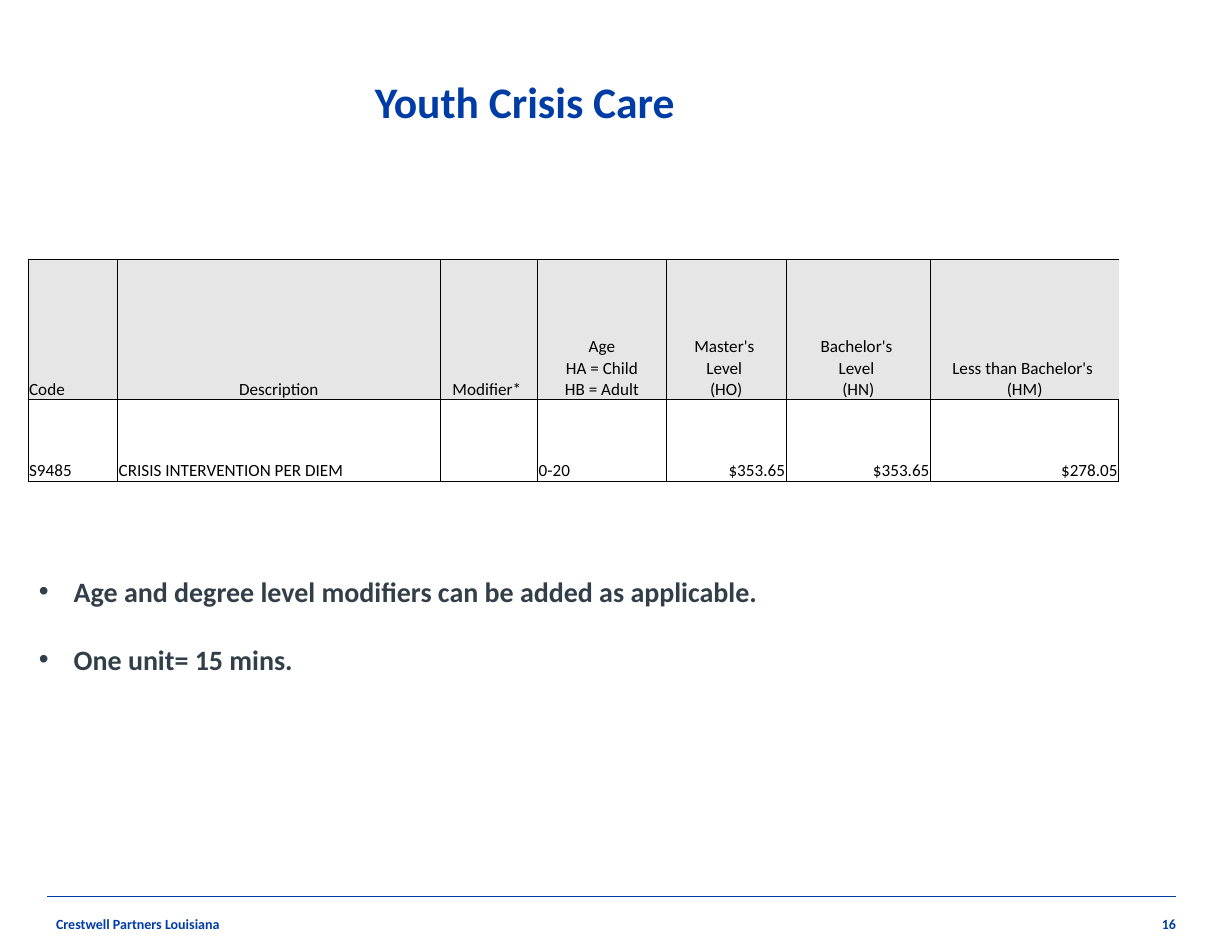
import copy

import pptx
import pptx.dml.color
import pptx.enum.shapes
import pptx.enum.text
import pptx.oxml
import pptx.oxml.ns
import pptx.util
from pptx.util import Inches

RGB = pptx.dml.color.RGBColor
BLUE = RGB(0x00, 0x3C, 0xA5)
SLATE = RGB(0x33, 0x3F, 0x48)
BLACK = RGB(0x00, 0x00, 0x00)
WHITE = RGB(0xFF, 0xFF, 0xFF)
GREY = RGB(0xE7, 0xE6, 0xE6)

ALIGN = pptx.enum.text.PP_ALIGN
ANCHOR = pptx.enum.text.MSO_ANCHOR
LEFT, MID, RIGHT = ALIGN.LEFT, ALIGN.CENTER, ALIGN.RIGHT
qn = pptx.oxml.ns.qn

COLS = [0.8, 2.88, 0.87, 1.15, 1.07, 1.29, 1.68]
ROWS = [1.25, 0.73]
HEAD = ["Code", "Description", "Modifier* ", "Age\nHA = Child\nHB = Adult",
        "Master's \nLevel \n(HO)", "Bachelor's \nLevel \n(HN)",
        "Less than Bachelor's \n(HM)"]
RATES = ["S9485", "CRISIS INTERVENTION PER DIEM", "", "0-20",
         "$353.65", "$353.65", "$278.05"]
NOTES = ["Age and degree level modifiers can be added as applicable.",
         "One unit= 15 mins."]


def write(para, text, size=11, color=BLACK, bold=False, align=LEFT):
    """Put text in a paragraph; each newline becomes a line break."""
    para.text = text
    para.alignment = align
    for run in para.runs:
        font = run.font
        font.name, font.size, font.bold = "Calibri", pptx.util.Pt(size), bold
        font.color.rgb = color
    for br in para._p.findall(qn("a:br")):
        br.append(copy.deepcopy(para.runs[0]._r.rPr))


def frame(slide, box, inset=True):
    """Add a wrapping text box and return its text frame."""
    body = slide.shapes.add_textbox(*map(Inches, box)).text_frame
    body.word_wrap = True
    if not inset:
        body.margin_left = body.margin_right = 0
        body.margin_top = body.margin_bottom = 0
        body.vertical_anchor = ANCHOR.MIDDLE
    return body


def title(slide, box):
    para = frame(slide, box, inset=False).paragraphs[0]
    write(para, "Youth Crisis Care", size=28, color=BLUE, bold=True, align=MID)
    para.line_spacing = 0.9


def border(cell, sides):
    """Draw the named sides in thin black and hide the others."""
    props = cell._tc.get_or_add_tcPr()
    for side in "LRTB":
        paint = (f'<a:solidFill><a:srgbClr val="{BLACK}"/></a:solidFill>'
                 if side in sides else "<a:noFill/>")
        props.append(pptx.oxml.parse_xml(
            f'<a:ln{side} {pptx.oxml.ns.nsdecls("a")} '
            f'w="{pptx.util.Pt(0.5)}">{paint}</a:ln{side}>'))


def rates(slide, box):
    table = slide.shapes.add_table(
        len(ROWS), len(COLS), *map(Inches, box)).table
    table.first_row = table.horz_banding = False
    for col, width in zip(table.columns, COLS):
        col.width = Inches(width)
    for row, height in zip(table.rows, ROWS):
        row.height = Inches(height)

    last = len(COLS) - 1
    for r, texts in enumerate((HEAD, RATES)):
        for c, text in enumerate(texts):
            cell = table.cell(r, c)
            cell.margin_left = cell.margin_right = Inches(0.01)
            cell.margin_top, cell.margin_bottom = Inches(0.01), 0
            cell.vertical_anchor = ANCHOR.BOTTOM
            # The header row is open at its right end
            border(cell, "LTB" if (r, c) == (0, last) else "LRTB")
            cell.fill.solid()
            cell.fill.fore_color.rgb = WHITE if r else GREY
            if r:
                align = RIGHT if c > 3 else LEFT
            else:
                align = MID if c else LEFT
            write(cell.text_frame.paragraphs[0], text, align=align)


def notes(slide, box):
    body = frame(slide, box)
    for i, text in enumerate(NOTES):
        para = body.add_paragraph() if i else body.paragraphs[0]
        write(para, text, size=18, color=SLATE, bold=True)
        para.space_before = pptx.util.Pt(22 if i else 0)
        props = para._p.get_or_add_pPr()
        props.set("marL", str(Inches(0.31)))
        props.set("indent", str(Inches(-0.31)))
        for tag, key, value in (("buFont", "typeface", "Arial"),
                                ("buChar", "char", "•")):
            props.append(pptx.oxml.parse_xml(
                f'<a:{tag} {pptx.oxml.ns.nsdecls("a")} {key}="{value}"/>'))


def footer(slide, box):
    left, top, width, height = box
    right = left + width
    # Rule
    rule = slide.shapes.add_connector(
        pptx.enum.shapes.MSO_CONNECTOR.STRAIGHT,
        Inches(left), Inches(top), Inches(right), Inches(top))
    rule.line.color.rgb = BLUE
    rule.line.width = pptx.util.Pt(0.5)
    rule._element.spPr.append(pptx.oxml.parse_xml(
        f'<a:effectLst {pptx.oxml.ns.nsdecls("a")}/>'))
    # Name and page number
    for text, x, wide, align in (
            ("Crestwell Partners Louisiana", left + 0.08, 3.71, LEFT),
            ("16", right - 2.48, 2.48, RIGHT)):
        body = frame(slide, (x, top, wide, height), inset=False)
        write(body.paragraphs[0], text, size=9, color=BLUE, bold=True,
              align=align)


def main():
    deck = pptx.Presentation()
    deck.slide_width, deck.slide_height = Inches(11), Inches(8.5)
    slide = deck.slides.add_slide(deck.slide_layouts[6])
    title(slide, (0.5, 0.5, 8.37, 0.87))
    footer(slide, (0.42, 8, 10.08, 0.5))
    rates(slide, (0.25, 2.32, sum(COLS), sum(ROWS)))
    notes(slide, (0.25, 5.08, 9.83, 1.01))
    deck.save("out.pptx")


if __name__ == "__main__":
    main()
